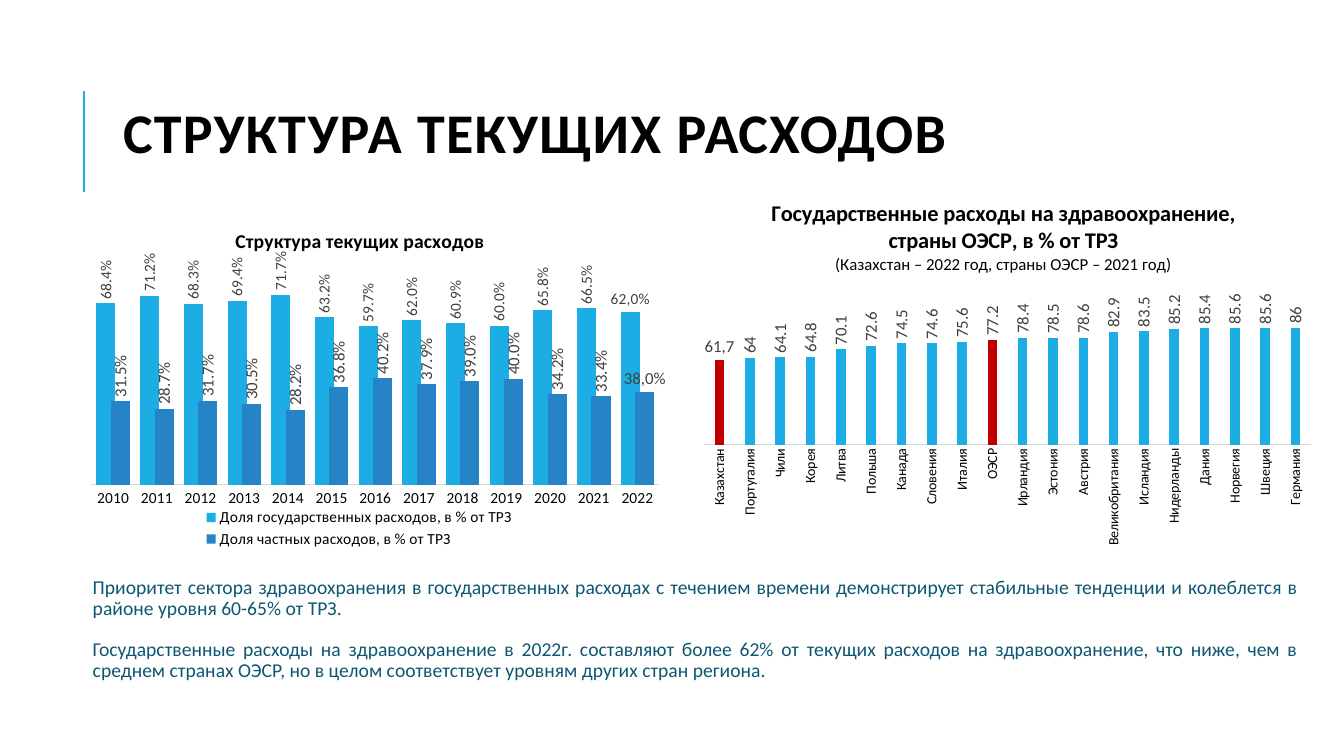
from pptx import Presentation
from pptx.chart.data import CategoryChartData
from pptx.dml.color import RGBColor
from pptx.enum.chart import XL_CHART_TYPE, XL_LABEL_POSITION, XL_LEGEND_POSITION, XL_TICK_MARK
from pptx.enum.shapes import MSO_CONNECTOR
from pptx.enum.text import MSO_ANCHOR, MSO_AUTO_SIZE, PP_ALIGN
from pptx.oxml import parse_xml
from pptx.oxml.ns import nsdecls, qn
from pptx.util import Inches, Pt

COLUMNS = XL_CHART_TYPE.COLUMN_CLUSTERED
OUTSIDE = XL_LABEL_POSITION.OUTSIDE_END
BOTTOM = XL_LEGEND_POSITION.BOTTOM
NO_TICKS = XL_TICK_MARK.NONE
STRAIGHT = MSO_CONNECTOR.STRAIGHT
MIDDLE = MSO_ANCHOR.MIDDLE
NO_FIT = MSO_AUTO_SIZE.NONE
LEFT, JUSTIFY = PP_ALIGN.LEFT, PP_ALIGN.JUSTIFY

BLACK = RGBColor(0x00, 0x00, 0x00)
SKY = RGBColor(0x1C, 0xAD, 0xE4)
BLUE = RGBColor(0x26, 0x83, 0xC6)
RED = RGBColor(0xC0, 0x00, 0x00)
TEAL = RGBColor(0x0E, 0x57, 0x72)
GRAY = RGBColor(0x40, 0x40, 0x40)
AXIS = RGBColor(0xD9, 0xD9, 0xD9)
UPRIGHT = "-5400000"

YEARS = [str(year) for year in range(2010, 2023)]
PUBLIC = [0.684, 0.712, 0.683, 0.694, 0.717, 0.632, 0.597, 0.620, 0.609, 0.600, 0.658, 0.665, 0.651]
PRIVATE = [0.315, 0.287, 0.317, 0.305, 0.282, 0.368, 0.402, 0.379, 0.390, 0.400, 0.342, 0.334, 0.349]
COUNTRIES = {
    "Казахстан": 62.1, "Португалия": 64, "Чили": 64.1, "Корея": 64.8, "Литва": 70.1,
    "Польша": 72.6, "Канада": 74.5, "Словения": 74.6, "Италия": 75.6, "ОЭСР": 77.2,
    "Ирландия": 78.4, "Эстония": 78.5, "Австрия": 78.6, "Великобритания": 82.9,
    "Исландия": 83.5, "Нидерланды": 85.2, "Дания": 85.4, "Норвегия": 85.6,
    "Швеция": 85.6, "Германия": 86,
}
NOTES = [
    "Приоритет сектора здравоохранения в государственных расходах с течением времени "
    "демонстрирует стабильные тенденции и колеблется в районе уровня 60-65% от ТРЗ.",
    "Государственные расходы на здравоохранение в 2022г. составляют более 62% от текущих "
    "расходов на здравоохранение, что ниже, чем в среднем странах ОЭСР, но в целом "
    "соответствует уровням других стран региона.",
]


class Slide:
    font = "Calibri"

    def __init__(self, prs):
        self.s = prs.slides.add_slide(prs.slide_layouts[5])

    def style(self, font, size, color, bold=False):
        font.name, font.size, font.bold = self.font, Pt(size), bold
        font.color.rgb = color

    def place(self, element, x, y, w=None, h=None, inner=False):
        for old in element.findall(qn("c:layout")):
            element.remove(old)
        sizes = [("x", x), ("y", y), ("w", w), ("h", h)]
        parts = '<c:layoutTarget val="inner"/>' if inner else ""
        parts += '<c:xMode val="edge"/><c:yMode val="edge"/>'
        parts += "".join(f'<c:{n} val="{v}"/>' for n, v in sizes if v is not None)
        layout = parse_xml(f'<c:layout {nsdecls("c")}><c:manualLayout>{parts}</c:manualLayout></c:layout>')
        if inner:
            element.insert(0, layout)
        else:
            element.find(qn("c:overlay")).addprevious(layout)

    def title(self, text, x, y, w, h):
        sp = self.s.shapes.title
        sp.left, sp.top, sp.width, sp.height = Inches(x), Inches(y), Inches(w), Inches(h)
        tf = sp.text_frame
        tf.text = text
        tf.word_wrap, tf.auto_size, tf.vertical_anchor = True, NO_FIT, MIDDLE
        p = tf.paragraphs[0]
        p.alignment, p.line_spacing = LEFT, 0.9
        self.style(p.font, 40, BLACK, True)
        p.font._element.set("spc", "100")

    def rule(self, x, y1, y2):
        line = self.s.shapes.add_connector(STRAIGHT, Inches(x), Inches(y1), Inches(x), Inches(y2))
        line.line.color.rgb, line.line.width = SKY, Pt(1.5)
        line._element.spPr.append(parse_xml(f'<a:effectLst {nsdecls("a")}/>'))

    def body(self, texts, x, y, w, h):
        tf = self.s.shapes.add_textbox(Inches(x), Inches(y), Inches(w), Inches(h)).text_frame
        tf.word_wrap = True
        tf.margin_left = tf.margin_right = tf.margin_top = tf.margin_bottom = Inches(0.05)
        for i, text in enumerate(texts):
            p = tf.add_paragraph() if i else tf.paragraphs[0]
            p.text = text
            p.alignment, p.line_spacing = JUSTIFY, 0.9
            p.space_before, p.space_after = Pt(12), Pt(2)
            p._p.get_or_add_pPr().set("marL", str(Inches(0.1)))
            self.style(p.font, 14, TEAL)

    def columns(self, box, cats, series, top, gap, overlap, plot_area, number_format):
        data = CategoryChartData(number_format=number_format)
        data.categories = cats
        for name, values in series:
            data.add_series(name, values)
        chart = self.s.shapes.add_chart(COLUMNS, *map(Inches, box), data).chart
        self.style(chart.font, 10, BLACK)
        chart.has_legend = False
        plot = chart.plots[0]
        plot.gap_width, plot.overlap, plot.vary_by_categories = gap, overlap, False
        axis = chart.value_axis
        axis.visible, axis.has_major_gridlines = False, False
        axis.minimum_scale, axis.maximum_scale = 0, top
        axis = chart.category_axis
        axis.major_tick_mark = axis.minor_tick_mark = NO_TICKS
        axis.format.line.color.rgb, axis.format.line.width = AXIS, Pt(0.75)
        self.place(chart._chartSpace.chart.plotArea, *plot_area, inner=True)
        return chart

    def category_labels(self, chart, size, rotation="0"):
        axis = chart.category_axis
        self.style(axis.tick_labels.font, size, BLACK)
        axis._element.xpath("./c:txPr/a:bodyPr")[0].set("rot", rotation)

    def chart_title(self, chart, lines, x, y):
        title = chart.chart_title
        tf = title.text_frame
        for i, (text, size, bold) in enumerate(lines):
            p = tf.add_paragraph() if i else tf.paragraphs[0]
            p.text = text
            self.style(p.font, size, BLACK, bold)
        self.place(title._element, x, y)

    def legend(self, chart, size, *area):
        chart.has_legend = True
        legend = chart.legend
        legend.position, legend.include_in_layout = BOTTOM, False
        self.style(legend.font, size, BLACK)
        self.place(legend._element, *area)

    def series(self, ser, color, size, number_format, special, special_text):
        ser.format.fill.solid()
        ser.format.fill.fore_color.rgb = color
        labels = ser.data_labels
        labels.show_value, labels.position = True, OUTSIDE
        labels.number_format, labels.number_format_is_linked = number_format, False
        self.style(labels.font, size, GRAY)
        ser._element.xpath("./c:dLbls/c:txPr/a:bodyPr")[0].set("rot", UPRIGHT)
        label = ser.points[special].data_label
        p = label.text_frame.paragraphs[0]
        p.text = special_text
        self.style(p.font, size, GRAY)
        label.position = OUTSIDE
        ser._element.xpath("./c:dLbls/c:dLbl//a:bodyPr")[0].set("rot", "0")

    def highlight(self, ser, indexes, color):
        for i in indexes:
            fill = ser.points[i].format.fill
            fill.solid()
            fill.fore_color.rgb = color


def main():
    prs = Presentation()
    prs.slide_width, prs.slide_height = Inches(13.33), Inches(7.5)
    slide = Slide(prs)
    slide.rule(0.83, 0.9, 1.9)
    slide.title("СТРУКТУРА ТЕКУЩИХ РАСХОДОВ", 1.12, 0.73, 11.1, 1.22)
    slide.body(NOTES, 0.77, 5.68, 12.16, 1.61)

    shares = [("Доля государственных расходов, в % от ТРЗ", PUBLIC),
              ("Доля частных расходов, в % от ТРЗ", PRIVATE)]
    chart = slide.columns((0.4, 2.05, 6.33, 3.45), YEARS, shares, 0.8, 54, 24,
                          (0.08, 0.19, 0.89, 0.61), "0.0%")
    slide.category_labels(chart, 11)
    slide.chart_title(chart, [("Структура текущих расходов", 14, True)], 0.3, 0.05)
    slide.legend(chart, 11, 0.25, 0.86, 0.5, 0.13)
    looks = [(SKY, 11, "62,0%"), (BLUE, 12, "38,0%")]
    for ser, (color, size, text) in zip(chart.plots[0].series, looks):
        slide.series(ser, color, size, "0.0%", len(YEARS) - 1, text)

    names = list(COUNTRIES)
    chart = slide.columns((6.86, 1.75, 6.33, 3.75), names,
                          [("Государственные расходы", COUNTRIES.values())], 100, 219, -27,
                          (0.02, 0.35, 0.95, 0.36), "General")
    slide.category_labels(chart, 10, UPRIGHT)
    slide.chart_title(chart, [("Государственные расходы на здравоохранение,", 16, True),
                              ("страны ОЭСР, в % от ТРЗ", 16, True),
                              ("(Казахстан – 2022 год, страны ОЭСР – 2021 год)", 12, False)], 0.12, 0.05)
    ser = chart.plots[0].series[0]
    slide.series(ser, SKY, 12, "General", 0, "61,7")
    slide.highlight(ser, [names.index("Казахстан"), names.index("ОЭСР")], RED)
    prs.save("out.pptx")


if __name__ == "__main__":
    main()
